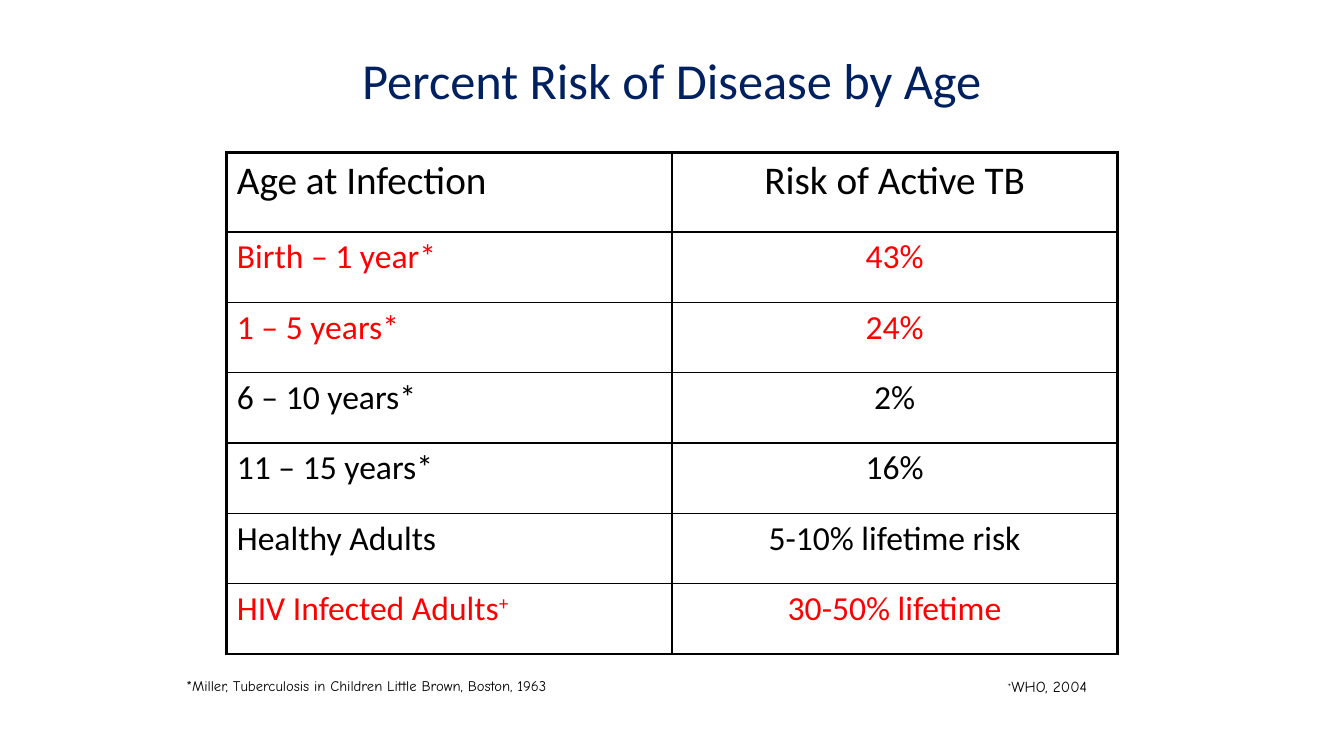
import pptx
import pptx.dml.color
import pptx.enum.text
import pptx.oxml
import pptx.oxml.ns
import pptx.util

PX = 9525  # 96 px to the inch
COLORS = {"title": "002060", "text": "000000", "risk": "FF0000", "border": "000000"}
BODY_FONT, NOTE_FONT = "Calibri", "Comic Neue"
LEFT, CENTER = pptx.enum.text.PP_ALIGN.LEFT, pptx.enum.text.PP_ALIGN.CENTER
OUTER, INNER = 2.25, 1

# Label, risk, colour; "^" marks the next character as superscript
ROWS = [
    ("Age at Infection", "Risk of Active TB", "text"),
    ("Birth – 1 year*", "43%", "risk"),
    ("1 – 5 years*", "24%", "risk"),
    ("6 – 10 years*", "2%", "text"),
    ("11 – 15 years*", "16%", "text"),
    ("Healthy Adults", "5-10% lifetime risk", "text"),
    ("HIV Infected Adults^+", "30-50% lifetime", "risk"),
]


def px(n):
    return pptx.util.Emu(n * PX)


def write(tf, text, size, color, font=BODY_FONT, align=LEFT):
    """Fill the first paragraph, raising the character that follows "^"."""
    p = tf.paragraphs[0]
    p.alignment = align
    before, _, after = text.partition("^")
    for part, raised in ((before, False), (after[:1], True), (after[1:], False)):
        if not part:
            continue
        r = p.add_run()
        r.text = part
        r.font.name = font
        r.font.size = pptx.util.Pt(size)
        r.font.color.rgb = pptx.dml.color.RGBColor.from_string(COLORS[color])
        if raised:
            r.font._element.set("baseline", "30000")


def add_text(s, box, text, size, color, font, align=LEFT, wrap=True):
    tf = s.shapes.add_textbox(*map(px, box)).text_frame
    tf.word_wrap = wrap
    write(tf, text, size, color, font, align)
    return tf


def set_borders(cell, widths):
    """Draw the sides given as {"L": points, ...} in schema order."""
    tcPr = cell._tc.get_or_add_tcPr()
    for side, width in widths.items():
        tcPr.append(pptx.oxml.parse_xml(
            f'<a:ln{side} {pptx.oxml.ns.nsdecls("a")} w="{pptx.util.Pt(width)}">'
            f'<a:solidFill><a:srgbClr val="{COLORS["border"]}"/></a:solidFill>'
            f'</a:ln{side}>'))


def add_title(s, box):
    tf = add_text(s, box, "Percent Risk of Disease by Age", 36, "title", BODY_FONT, CENTER)
    tf.vertical_anchor = pptx.enum.text.MSO_ANCHOR.MIDDLE


def add_risk_table(s, box, header_height):
    x, y, w, h = box
    last = len(ROWS) - 1
    table = s.shapes.add_table(len(ROWS), 2, px(x), px(y), px(w), px(h)).table
    table.first_row = table.horz_banding = False
    for column in table.columns:
        column.width = px(w // 2)
    for i, (label, risk, color) in enumerate(ROWS):
        table.rows[i].height = px((h - header_height) // last if i else header_height)
        for j, text in enumerate((label, risk)):
            cell = table.cell(i, j)
            set_borders(cell, {
                "L": INNER if j else OUTER,
                "R": OUTER if j else INNER,
                "T": INNER if i else OUTER,
                "B": OUTER if i == last else INNER,
            })
            cell.fill.background()
            write(cell.text_frame, text, 24 if i else 28, color,
                  align=CENTER if j else LEFT)


def add_sources(s, box):
    x, y, w, h = box
    add_text(s, (x, y, 408, h), "*Miller, Tuberculosis in Children Little Brown, Boston, 1963",
             10.5, "text", NOTE_FONT)
    who_width = 108
    add_text(s, (x + w - who_width, y, who_width, h), "^+WHO, 2004",
             11, "text", NOTE_FONT, wrap=False)


def main():
    prs = pptx.Presentation()
    prs.slide_width, prs.slide_height = px(1280), px(720)
    s = prs.slides.add_slide(prs.slide_layouts[6])
    add_title(s, (232, 16, 816, 120))
    add_risk_table(s, (216, 145, 848, 478), header_height=76)
    add_sources(s, (168, 640, 890, 27))
    prs.save("out.pptx")


if __name__ == "__main__":
    main()
